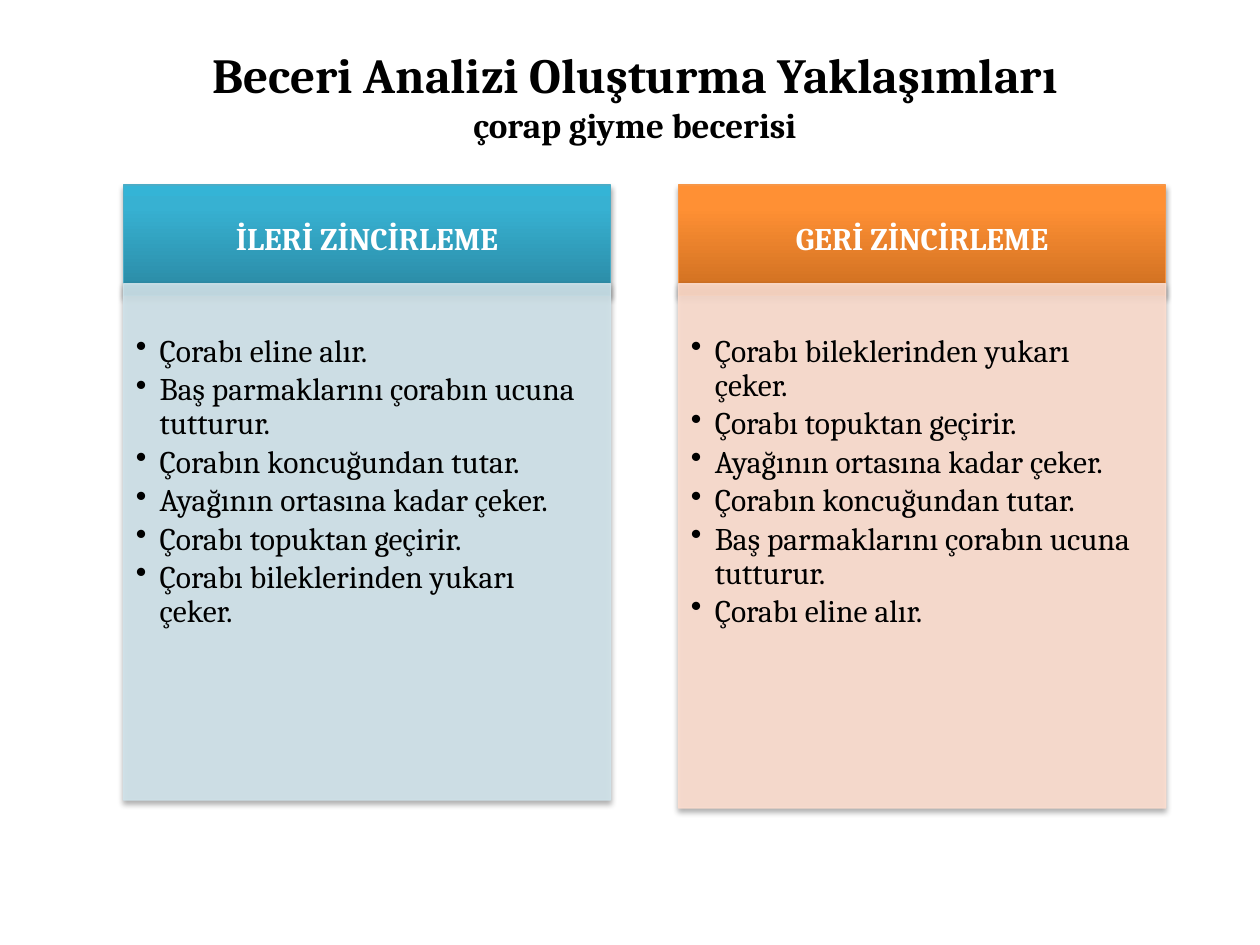
import copy

import lxml.etree
import pptx
import pptx.util
import pptx.dml.color
import pptx.enum.shapes
import pptx.enum.text
import pptx.oxml
import pptx.oxml.ns

Cm, Pt = pptx.util.Cm, pptx.util.Pt
ALIGN, ANCHOR = pptx.enum.text.PP_ALIGN, pptx.enum.text.MSO_ANCHOR
qn = pptx.oxml.ns.qn

FONT = "Cambria"
COLORS = {
    "text": "000000", "heading": "FFFFFF", "shadow": "000000",
    "blue_line": "4BACC6", "blue_body": "D0E3EA",
    "orange_line": "F79646", "orange_body": "FCDDCF",
}
GRADIENTS = {
    "blue": [(0, "2A88A2"), (0.8, "37B1D2"), (1, "34B4D6")],
    "orange": [(0, "CC6E20"), (0.8, "FF9034"), (1, "FF9136")],
}
TITLE = "Beceri Analizi Oluşturma Yaklaşımları"
SUBTITLE = "çorap giyme becerisi"
COLUMNS = [
    {"heading": "İLERİ ZİNCİRLEME", "color": "blue", "height": 10.41, "steps": [
        "Çorabı eline alır.",
        "Baş parmaklarını çorabın ucuna tutturur.",
        "Çorabın koncuğundan tutar.",
        "Ayağının ortasına kadar çeker.",
        "Çorabı topuktan geçirir.",
        "Çorabı bileklerinden yukarı çeker."]},
    {"heading": "GERİ ZİNCİRLEME", "color": "orange", "height": 10.57, "steps": [
        "Çorabı bileklerinden yukarı çeker.",
        "Çorabı topuktan geçirir.",
        "Ayağının ortasına kadar çeker.",
        "Çorabın koncuğundan tutar.",
        "Baş parmaklarını çorabın ucuna tutturur.",
        "Çorabı eline alır."]},
]
LEFT, PITCH, WIDTH = 2.49, 11.19, 9.82
HEAD_TOP, HEAD_HEIGHT, BODY_TOP = 3.73, 2.23, 5.72


def rgb(value):
    return pptx.dml.color.RGBColor.from_string(value)


def add_text(p, text, size=18, color="text", bold=False, align=ALIGN.LEFT):
    p.alignment = align
    r = p.add_run()
    r.text = text
    r.font.name, r.font.size, r.font.bold = FONT, Pt(size), bold
    r.font.color.rgb = rgb(COLORS[color])


def add_bullet(p, indent):
    pPr = p._p.get_or_add_pPr()
    pPr.set("marL", str(indent))
    pPr.set("indent", str(-indent))
    lxml.etree.SubElement(pPr, qn("a:buChar"), char="•")


def add_shadow(sp):
    sp.shadow.inherit = False
    effects = sp._element.spPr.find(qn("a:effectLst"))
    effects.append(pptx.oxml.parse_xml(
        f'<a:outerShdw {pptx.oxml.ns.nsdecls("a")} blurRad="{Pt(3.1)}" dist="{Pt(1.8)}" '
        f'dir="5400000" rotWithShape="0"><a:srgbClr val="{COLORS["shadow"]}">'
        '<a:alpha val="35000"/></a:srgbClr></a:outerShdw>'))


def fill_gradient(sp, stops):
    sp.fill.gradient()
    sp.fill.gradient_angle = 90
    stop_list = sp._element.spPr.find(".//" + qn("a:gsLst"))
    stop_list.append(copy.deepcopy(stop_list[-1]))
    for stop, (position, color) in zip(sp.fill.gradient_stops, stops):
        stop.position = position
        stop.color.rgb = rgb(color)


def set_opacity(sp, percent):
    """Make the solid fill and the line of a shape partly transparent."""
    for color in sp._element.spPr.iter(qn("a:srgbClr")):
        lxml.etree.SubElement(color, qn("a:alpha"), val=str(percent * 1000))


def add_box(slide, left, top, height, line, anchor, margins):
    sp = slide.shapes.add_shape(pptx.enum.shapes.MSO_SHAPE.RECTANGLE,
                                Cm(left), Cm(top), Cm(WIDTH), Cm(height))
    sp.line.color.rgb = rgb(COLORS[line])
    sp.line.width = Pt(0.75)
    tf = sp.text_frame
    tf.word_wrap = True
    tf.vertical_anchor = anchor
    tf.margin_left, tf.margin_top, tf.margin_right, tf.margin_bottom = map(Cm, margins)
    return sp


def add_column(slide, left, column):
    name = column["color"]
    head = add_box(slide, left, HEAD_TOP, HEAD_HEIGHT, name + "_line",
                   ANCHOR.MIDDLE, (0.36, 0.2, 0.36, 0.2))
    fill_gradient(head, GRADIENTS[name])
    add_shadow(head)
    p = head.text_frame.paragraphs[0]
    p.line_spacing = 0.9
    add_text(p, column["heading"], color="heading", bold=True, align=ALIGN.CENTER)

    body = add_box(slide, left, BODY_TOP, column["height"], name + "_body",
                   ANCHOR.TOP, (0.25, 1.04, 0.36, 0.41))
    body.fill.solid()
    body.fill.fore_color.rgb = rgb(COLORS[name + "_body"])
    set_opacity(body, 90)
    add_shadow(body)
    tf = body.text_frame
    for i, step in enumerate(column["steps"]):
        p = tf.add_paragraph() if i else tf.paragraphs[0]
        p.line_spacing, p.space_after = 0.9, Pt(2.5)
        add_bullet(p, Cm(0.48))
        add_text(p, step)


def main():
    prs = pptx.Presentation()
    prs.slide_width, prs.slide_height = Cm(25.4), Cm(19.05)
    slide = prs.slides.add_slide(prs.slide_layouts[5])

    title = slide.shapes.title
    title.left, title.top, title.width, title.height = Cm(1.5), Cm(0.91), Cm(22.6), Cm(2.01)
    tf = title.text_frame
    tf.auto_size = pptx.enum.text.MSO_AUTO_SIZE.NONE
    tf.vertical_anchor = ANCHOR.MIDDLE
    p = tf.paragraphs[0]
    add_text(p, TITLE, size=28, bold=True, align=ALIGN.CENTER)
    p.add_line_break()
    add_text(p, SUBTITLE, size=20, bold=True, align=ALIGN.CENTER)

    for i, column in enumerate(COLUMNS):
        add_column(slide, LEFT + i * PITCH, column)
    prs.save("out.pptx")


if __name__ == "__main__":
    main()
